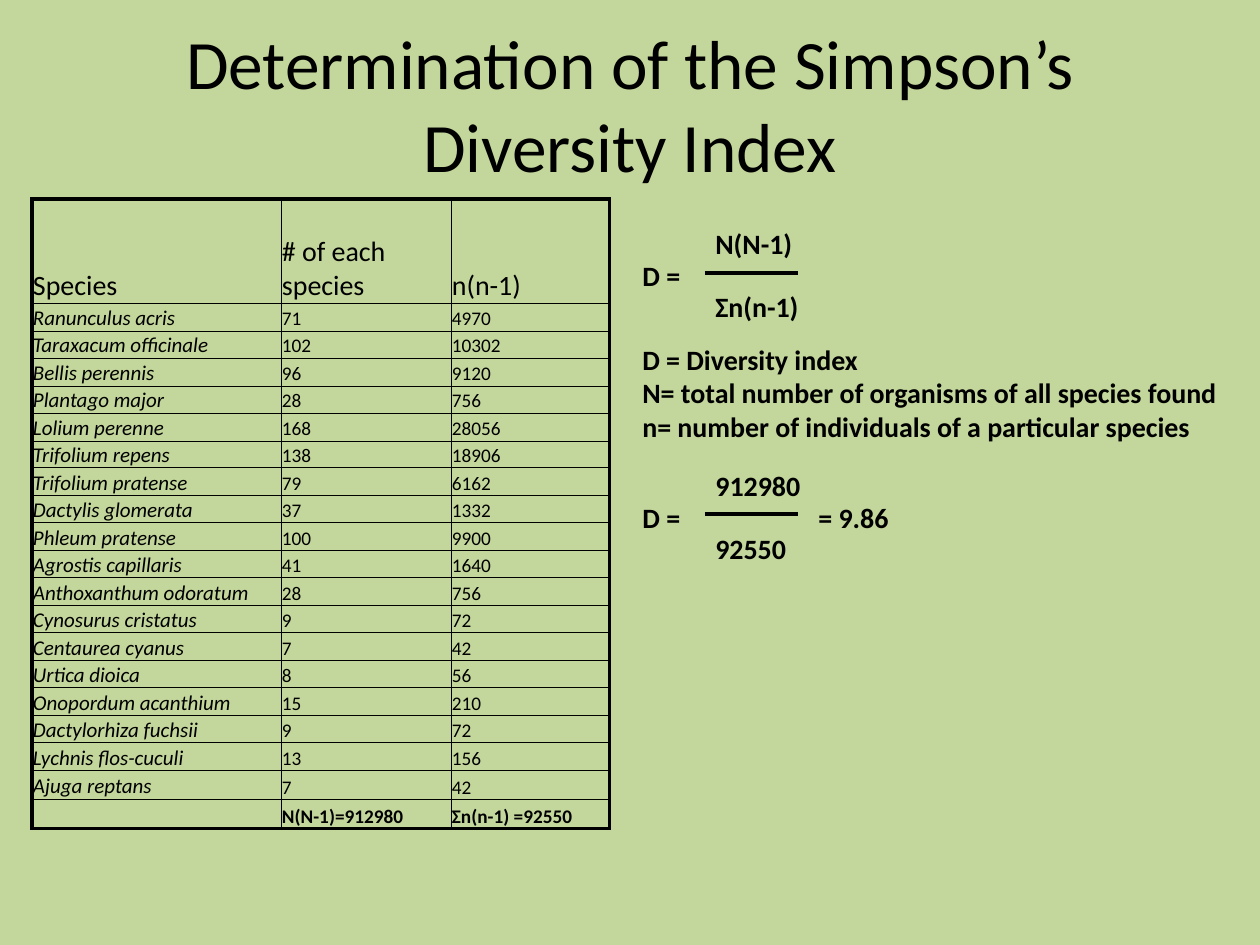
from lxml.etree import SubElement
from pptx import Presentation
from pptx.dml.color import RGBColor
from pptx.enum.shapes import MSO_CONNECTOR
from pptx.enum.text import MSO_ANCHOR, MSO_AUTO_SIZE, PP_ALIGN
from pptx.oxml import parse_xml
from pptx.oxml.ns import nsdecls, qn
from pptx.util import Emu, Pt

PX = 914400 // 126
FONT = "Calibri"
BLACK = "000000"
GREEN = "C3D69B"
THIN, THICK = 0.5, 2

HEADER = ("Species", "# of each species", "n(n-1)")
COUNTS = {
    "Ranunculus acris": 71,
    "Taraxacum officinale": 102,
    "Bellis perennis": 96,
    "Plantago major": 28,
    "Lolium perenne": 168,
    "Trifolium repens": 138,
    "Trifolium pratense": 79,
    "Dactylis glomerata": 37,
    "Phleum pratense": 100,
    "Agrostis capillaris": 41,
    "Anthoxanthum odoratum": 28,
    "Cynosurus cristatus": 9,
    "Centaurea cyanus": 7,
    "Urtica dioica": 8,
    "Onopordum acanthium": 15,
    "Dactylorhiza fuchsii": 9,
    "Lychnis flos-cuculi": 13,
    "Ajuga reptans": 7,
}
TOTALS = ("", "N(N-1)=912980", "Σn(n-1) =92550")
COLUMN_WIDTHS = (249, 170, 159)
ROW_HEIGHTS = [104] + [28 - i % 2 for i in range(17)] + [29, 29]
DEFINITIONS = (
    "D = Diversity index",
    "N= total number of organisms of all species found",
    "n= number of individuals of a particular species",
)


def px(*lengths):
    return [Emu(length * PX) for length in lengths]


def color(value):
    return RGBColor.from_string(value)


def style(para, size, bold=False, italic=False):
    font = para.font
    font.name, font.size = FONT, Pt(size)
    font.bold, font.italic = bold, italic
    font.color.rgb = color(BLACK)


def add_title(page, text, left, top, width, height):
    title = page.shapes.title
    title.left, title.top, title.width, title.height = px(left, top, width, height)
    frame = title.text_frame
    frame.text = text
    frame.word_wrap = True
    frame.auto_size = MSO_AUTO_SIZE.NONE
    frame.vertical_anchor = MSO_ANCHOR.MIDDLE
    para = frame.paragraphs[0]
    para.alignment = PP_ALIGN.CENTER
    style(para, 39.6)


def set_borders(cell, **points):
    properties = cell._tc.get_or_add_tcPr()
    for side in "LRTB":
        properties.append(parse_xml(
            f'<a:ln{side} {nsdecls("a")} w="{Pt(points[side])}"><a:solidFill>'
            f'<a:srgbClr val="{BLACK}"/></a:solidFill></a:ln{side}>'))


def add_species_table(page, left, top):
    records = [HEADER]
    records += [(name, str(n), str(n * (n - 1))) for name, n in COUNTS.items()]
    records.append(TOTALS)
    last_row, last_column = len(records) - 1, len(HEADER) - 1
    table = page.shapes.add_table(
        len(records), len(HEADER),
        *px(left, top, sum(COLUMN_WIDTHS), sum(ROW_HEIGHTS))).table
    table.first_row = table.horz_banding = False
    for column, width in zip(table.columns, COLUMN_WIDTHS):
        column.width = Emu(width * PX)
    for r, (record, height) in enumerate(zip(records, ROW_HEIGHTS)):
        table.rows[r].height = Emu(height * PX)
        for c, text in enumerate(record):
            cell = table.cell(r, c)
            cell.text = text
            cell.vertical_anchor = MSO_ANCHOR.BOTTOM
            cell.margin_left, cell.margin_right, cell.margin_top, cell.margin_bottom = px(1, 1, 1, 0)
            is_name = c == 0 and 0 < r < last_row
            size = 16 if r == 0 else 12 if is_name else 11
            style(cell.text_frame.paragraphs[0], size, bold=r == last_row, italic=is_name)
            set_borders(cell,
                        L=THICK if c == 0 else THIN,
                        R=THICK if c == last_column else THIN,
                        T=THICK if r == 0 else THIN,
                        B=THICK if r == last_row else THIN)
            cell.fill.background()


def add_label(page, lines, left, top, width, height, wrap=True):
    box = page.shapes.add_textbox(*px(left, top, width, height))
    frame = box.text_frame
    frame.word_wrap = wrap
    frame.text = "\n".join(lines)
    for para in frame.paragraphs:
        style(para, 16, bold=True)
    return frame


def add_fraction(page, numerator, denominator, left, top, bar, result=""):
    """Draw "D = numerator / denominator", with an optional result after it."""
    text = f"D =\t{result}" if result else "D ="
    frame = add_label(page, [text], left, top + 32, 325 if result else 84, 53)
    if result:
        properties = frame.paragraphs[0]._p.get_or_add_pPr()
        stops = parse_xml(f'<a:tabLst {nsdecls("a")}><a:tab pos="{176 * PX}" algn="l"/></a:tabLst>')
        properties.insert(0, stops)
    line = page.shapes.add_connector(
        MSO_CONNECTOR.STRAIGHT, *px(left + 75, top + bar, left + 168, top + bar))
    line.line.color.rgb = color(BLACK)
    line.line.width = Pt(2.5)
    SubElement(line._element.spPr, qn("a:effectLst"))
    add_label(page, [numerator], left + 73, top, 159, 47)
    add_label(page, [denominator], left + 73, top + 63, 116, 47)


def add_formulas(page, left, top):
    add_fraction(page, "N(N-1)", "Σn(n-1)", left, top, bar=53)
    add_label(page, DEFINITIONS, left, top + 116, 607, 152, wrap=False)
    add_fraction(page, "912980", "92550", left, top + 242, bar=52, result="= 9.86")


def main():
    deck = Presentation()
    deck.slide_width, deck.slide_height = px(1260, 945)
    page = deck.slides.add_slide(deck.slide_layouts[5])
    page.background.fill.solid()
    page.background.fill.fore_color.rgb = color(GREEN)
    add_title(page, "Determination of the Simpson’s Diversity Index", 63, 38, 1134, 130)
    add_species_table(page, 32, 199)
    add_formulas(page, 630, 220)
    deck.save("out.pptx")


if __name__ == "__main__":
    main()
